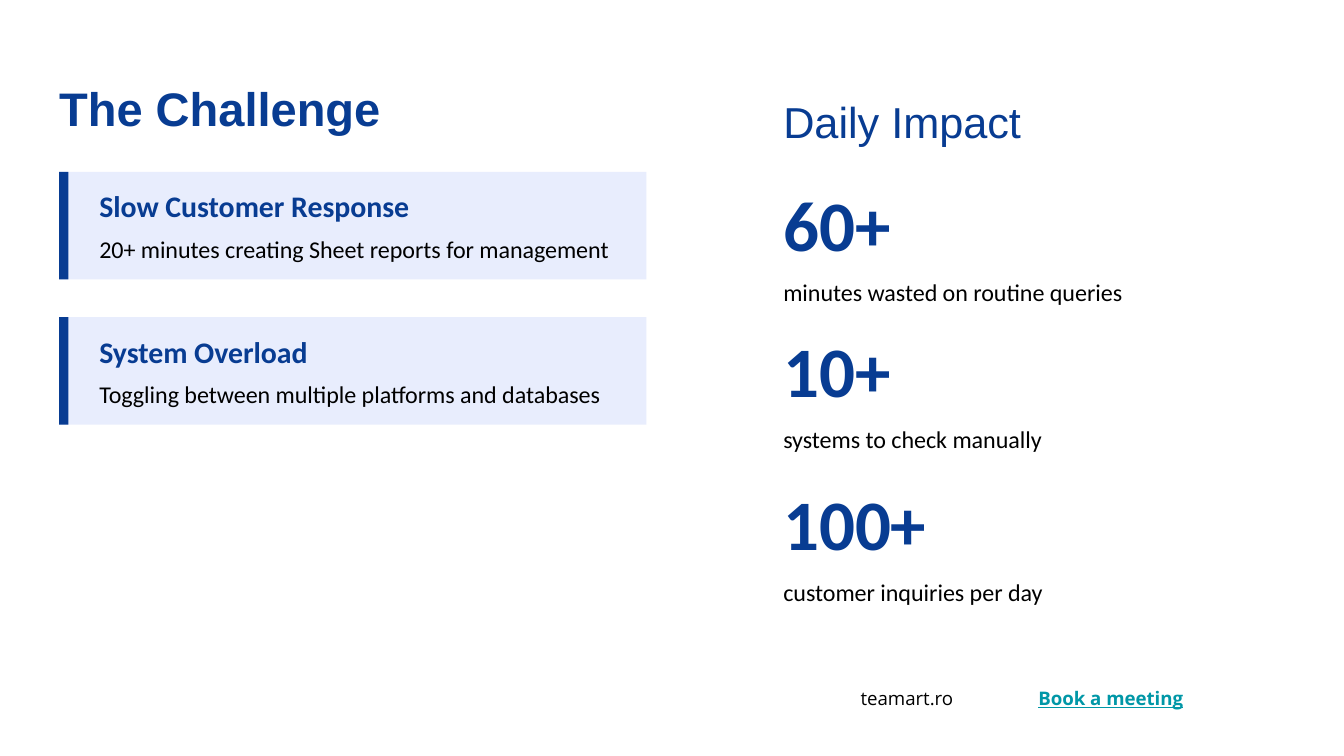
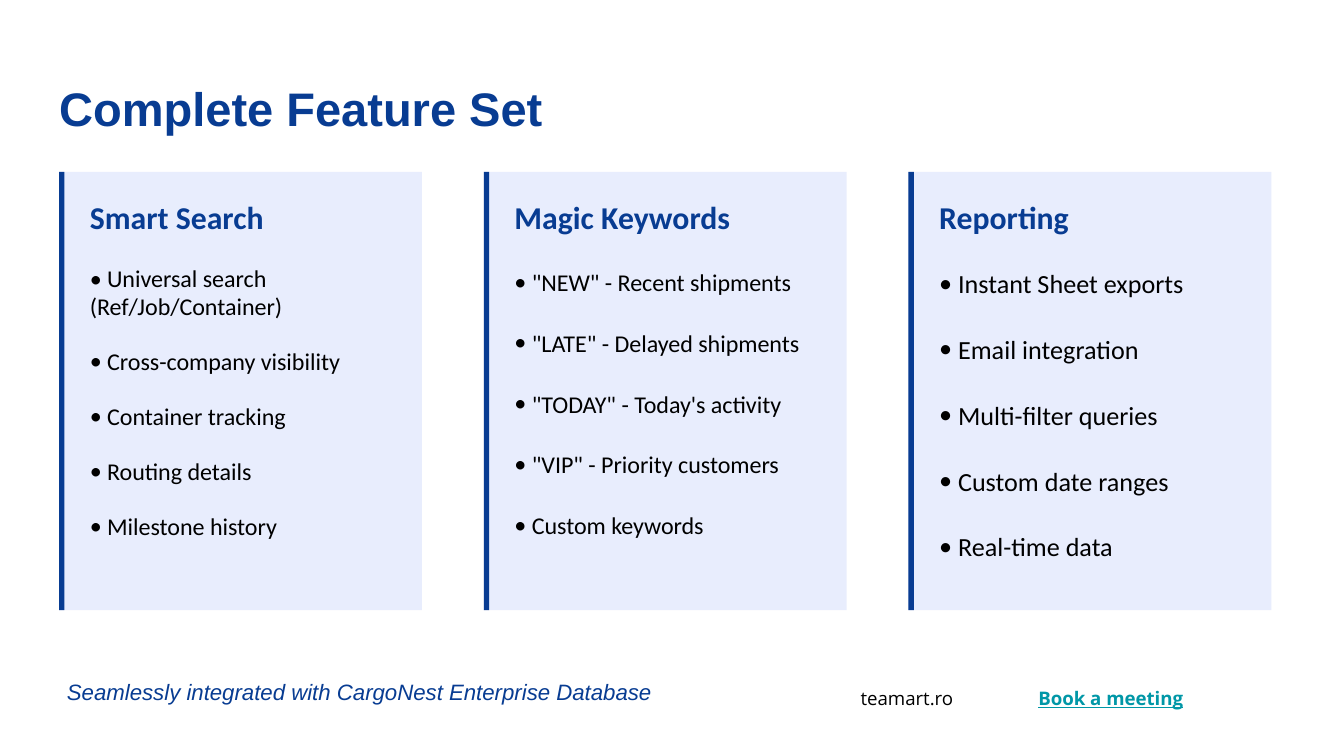
from lxml.etree import SubElement
from pptx import Presentation
from pptx.dml.color import RGBColor
from pptx.enum.shapes import MSO_SHAPE as Shape
from pptx.enum.text import MSO_ANCHOR as Anchor, PP_ALIGN as Align
from pptx.oxml.ns import qn
from pptx.util import Inches, Pt

COLORS = {"navy": "083C92", "pale": "E8EDFD", "teal": "0097A7", "black": "000000"}
TITLE = {"size": 25.2, "font": "Arial", "color": "navy", "bold": True}
SUBTITLE = {"size": 23.2, "font": "Arial", "color": "navy"}
NOTE = {"size": 11.9, "font": "Arial", "color": "navy", "italic": True}
CARD_HEAD = {"size": 16, "color": "navy", "bold": True}
COLUMN_HEAD = {"size": 17, "color": "navy", "bold": True}
NUMBER = {"size": 38, "color": "navy", "bold": True}
BODY = {"size": 12.9, "spacing": 0.95}
FOOTER = {"size": 10, "font": "Open Sans", "align": Align.RIGHT, "spacing": 1.15}
FOOTER_LINK = {**FOOTER, "color": "teal", "bold": True, "underline": True}


def write(slide, area, lines, size, font="Calibri", color="black", bold=False,
          italic=False, underline=None, align=Align.LEFT, spacing=1.0, box=None):
    """Fill a new text box, or the given one; lines starting with • become bullets."""
    left, top, width, height = map(Inches, area)
    if box is None:
        box = slide.shapes.add_textbox(left, top, width, height)
    box.left, box.top, box.width, box.height = left, top, width, height
    frame = box.text_frame
    frame.word_wrap = True
    frame.vertical_anchor = Anchor.TOP
    frame.margin_left = frame.margin_right = Inches(0.1)
    frame.margin_top = frame.margin_bottom = Inches(0.1)
    for index, line in enumerate(lines):
        para = frame.add_paragraph() if index else frame.paragraphs[0]
        para.alignment = align
        para.line_spacing = spacing
        if line.startswith("• "):
            line = line[2:]
            if index:
                para.space_before = Pt(round(size * 1.2 * spacing, 1))
            indent = Inches(size / 100)
            properties = para._p.get_or_add_pPr()
            properties.set("marL", str(indent))
            properties.set("indent", str(-indent))
            SubElement(properties, qn("a:buFont"), typeface=font)
            SubElement(properties, qn("a:buChar"), char="•")
        span = para.add_run()
        span.text = line
        span.font.name = font
        span.font.size = Pt(size)
        span.font.bold = bold
        span.font.italic = italic
        span.font.underline = underline
        span.font.color.rgb = RGBColor.from_string(COLORS[color])


def add_panel(slide, left, top, width, height, stripe):
    """Draw a pale panel with a navy stripe along its left edge."""
    for part_width, color in ((width, "pale"), (stripe, "navy")):
        part = slide.shapes.add_shape(Shape.RECTANGLE, Inches(left), Inches(top),
                                      Inches(part_width), Inches(height))
        part.shadow.inherit = False
        part.fill.solid()
        part.fill.fore_color.rgb = RGBColor.from_string(COLORS[color])
        part.line.fill.background()


deck = Presentation()
deck.slide_width = Inches(10)
deck.slide_height = Inches(10 * 9 / 16)

# Shared title and footer
pages = []
for title, title_width in (("The Challenge", 9.32), ("Complete Feature Set", 4)):
    page = deck.slides.add_slide(deck.slide_layouts[5])
    write(page, (0.34, 0.49, title_width, 0.63), [title], box=page.shapes.title, **TITLE)
    write(page, (6.15, 4.99, 1.04, 0.37), ["teamart.ro"], **FOOTER)
    write(page, (6.86, 4.99, 2.04, 0.37), ["Book a meeting"], **FOOTER_LINK)
    pages.append(page)
challenge, features = pages

# The Challenge: problems on the left, daily figures on the right
problems = [
    ("Slow Customer Response", "20+ minutes creating Sheet reports for management"),
    ("System Overload", "Toggling between multiple platforms and databases"),
]
for row, (heading, detail) in enumerate(problems):
    top = 1.28 + row * 1.08
    add_panel(challenge, 0.44, top, 4.37, 0.8, stripe=0.07)
    write(challenge, (0.64, top + 0.38, 4.05, 0.41), [detail], **BODY)
    write(challenge, (0.64, top + 0.02, 3.79, 0.34), [heading], **CARD_HEAD)

write(challenge, (5.73, 0.61, 4.54, 0.63), ["Daily Impact"], **SUBTITLE)
impacts = [
    (1.24, "60+", "minutes wasted on routine queries"),
    (2.33, "10+", "systems to check manually"),
    (3.47, "100+", "customer inquiries per day"),
]
for top, number, caption in impacts:
    write(challenge, (5.73, top + 0.74, 3.91, 0.41), [caption], **BODY)
    write(challenge, (5.73, top, 1.96, 0.73), [number], **NUMBER)

# Complete Feature Set: three columns
columns = [
    ("Smart Search", BODY, [
        "• Universal search", "(Ref/Job/Container)", "• Cross-company visibility",
        "• Container tracking", "• Routing details", "• Milestone history"]),
    ("Magic Keywords", {"size": 12.9, "spacing": 1.05}, [
        '• "NEW" - Recent shipments', '• "LATE" - Delayed shipments',
        '• "TODAY" - Today\'s activity', '• "VIP" - Priority customers',
        "• Custom keywords"]),
    ("Reporting", {"size": 14, "spacing": 1.05}, [
        "• Instant Sheet exports", "• Email integration", "• Multi-filter queries",
        "• Custom date ranges", "• Real-time data"]),
]
for index, (heading, style, items) in enumerate(columns):
    left = 0.44 + index * 3.16
    add_panel(features, left, 1.28, 2.7, 3.26, stripe=0.04)
    write(features, (left + 0.13, 1.88, 2.34, 2.4), items, **style)
    write(features, (left + 0.13, 1.37, 2.34, 0.34), [heading], **COLUMN_HEAD)

write(features, (0.4, 4.95, 5.33, 0.41),
      ["Seamlessly integrated with CargoNest Enterprise Database"], **NOTE)

deck.save("out.pptx")
